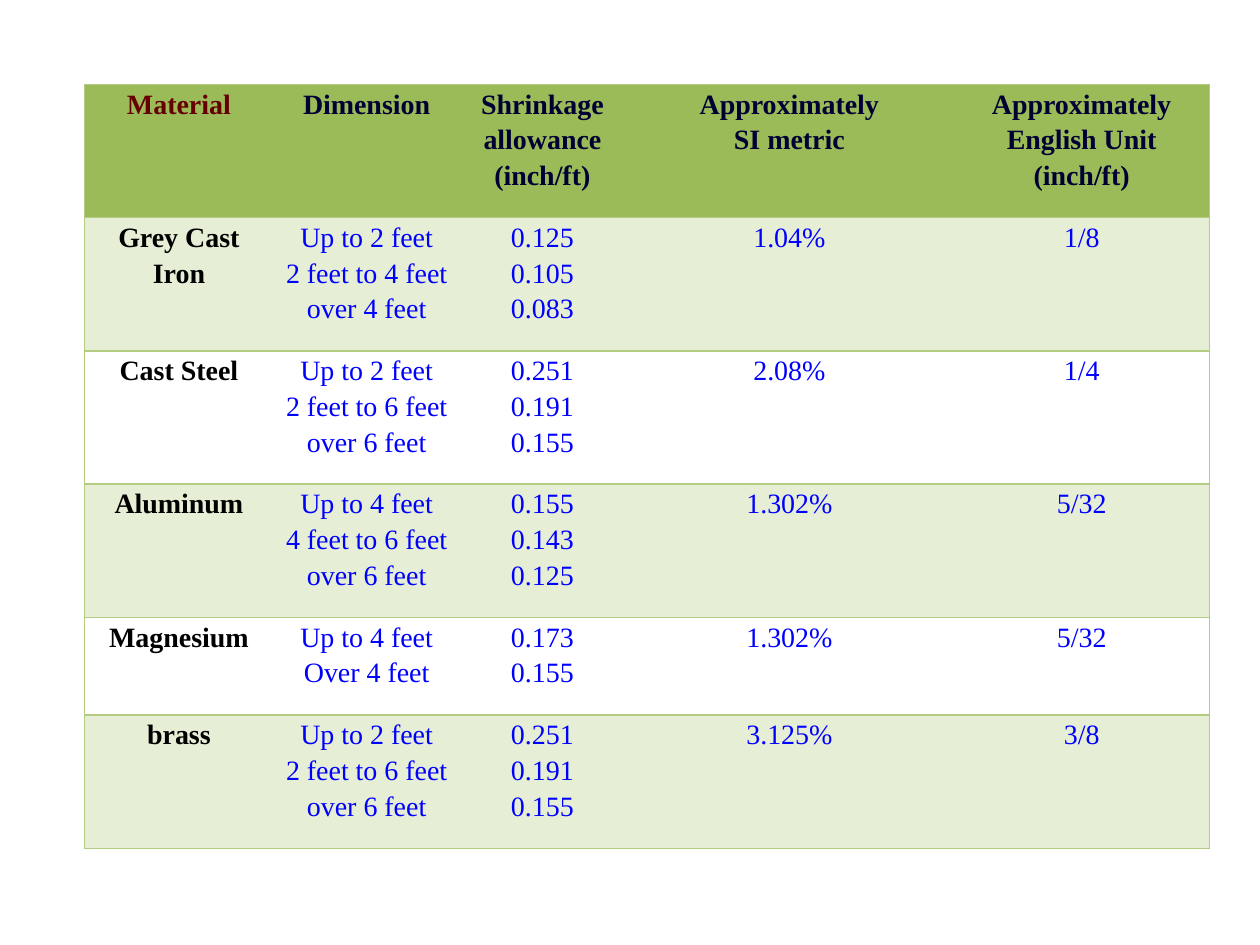
"""Build a slide with a table of shrinkage allowances for casting materials."""
from lxml.etree import SubElement
from pptx import Presentation
from pptx.dml.color import RGBColor
from pptx.enum.text import PP_ALIGN
from pptx.oxml.ns import qn
from pptx.util import Inches, Pt

HEADINGS = (
    "Material",
    "Dimension",
    "Shrinkage allowance (inch/ft)",
    "Approximately\nSI metric",
    "Approximately\nEnglish Unit\n(inch/ft)",
)
MATERIALS = (
    ("Grey Cast Iron", ("Up to 2 feet", "2 feet to 4 feet", "over 4 feet"),
     ("0.125", "0.105", "0.083"), "1.04%", "1/8"),
    ("Cast Steel", ("Up to 2 feet", "2 feet to 6 feet", "over 6 feet"),
     ("0.251", "0.191", "0.155"), "2.08%", "1/4"),
    ("Aluminum", ("Up to 4 feet", "4 feet to 6 feet", "over 6 feet"),
     ("0.155", "0.143", "0.125"), "1.302%", "5/32"),
    ("Magnesium", ("Up to 4 feet", "Over 4 feet"),
     ("0.173", "0.155"), "1.302%", "5/32"),
    ("brass", ("Up to 2 feet", "2 feet to 6 feet", "over 6 feet"),
     ("0.251", "0.191", "0.155"), "3.125%", "3/8"),
)
COLUMN_WIDTHS = (1.5, 1.48, 1.31, 2.61, 2.03)
HEADING_LINES = 3
LINE_HEIGHT = 0.2825
ROW_PADDING = 0.21
TABLE_START = 0.67

GREEN = RGBColor(0x9B, 0xBB, 0x59)
PALE_GREEN = RGBColor(0xE6, 0xEE, 0xD5)
BORDER_GREEN = RGBColor(0xB3, 0xCC, 0x82)
MAROON = RGBColor(0x66, 0x00, 0x00)
NAVY = RGBColor(0x00, 0x00, 0x33)
BLACK = RGBColor(0x00, 0x00, 0x00)
BLUE = RGBColor(0x00, 0x00, 0xFF)


def draw_borders(cell, visible_sides):
    properties = cell._tc.get_or_add_tcPr()
    for side in "LRTB":
        border = SubElement(properties, qn(f"a:ln{side}"), w=str(Pt(1)))
        if side in visible_sides:
            paint = SubElement(border, qn("a:solidFill"))
            SubElement(paint, qn("a:srgbClr"), val=str(BORDER_GREEN))
        else:
            SubElement(border, qn("a:noFill"))


def fill_cell(cell, text, background, color, bold):
    if background is None:
        cell.fill.background()
    else:
        cell.fill.solid()
        cell.fill.fore_color.rgb = background
    cell.margin_left = cell.margin_right = Inches(0.07)
    cell.margin_top = cell.margin_bottom = 0
    cell.text = text
    for paragraph in cell.text_frame.paragraphs:
        paragraph.alignment = PP_ALIGN.CENTER
        paragraph.line_spacing = 1.15
        paragraph.font.name = "Times New Roman"
        paragraph.font.size = Pt(16)
        paragraph.font.bold = bold
        paragraph.font.color.rgb = color


def main():
    presentation = Presentation()
    presentation.slide_width, presentation.slide_height = Inches(10), Inches(7.5)
    slide = presentation.slides.add_slide(presentation.slide_layouts[6])

    line_counts = [HEADING_LINES] + [len(material[1]) for material in MATERIALS]
    row_heights = [ROW_PADDING + LINE_HEIGHT * count for count in line_counts]
    allowances = slide.shapes.add_table(
        len(row_heights), len(COLUMN_WIDTHS), Inches(TABLE_START), Inches(TABLE_START),
        Inches(sum(COLUMN_WIDTHS)), Inches(sum(row_heights))).table
    allowances.first_row = allowances.horz_banding = False
    for column, width in zip(allowances.columns, COLUMN_WIDTHS):
        column.width = Inches(width)
    for row, height in zip(allowances.rows, row_heights):
        row.height = Inches(height)

    last_column = len(COLUMN_WIDTHS) - 1
    for row_index, entries in enumerate((HEADINGS,) + MATERIALS):
        is_heading = row_index == 0
        background = GREEN if is_heading else PALE_GREEN if row_index % 2 else None
        first_color, other_color = (MAROON, NAVY) if is_heading else (BLACK, BLUE)
        for column_index, entry in enumerate(entries):
            is_first = column_index == 0
            cell = allowances.cell(row_index, column_index)
            outer_side = "L" if is_first else "R" if column_index == last_column else ""
            draw_borders(cell, "TB" + outer_side)
            text = entry if isinstance(entry, str) else "\v".join(entry)
            fill_cell(cell, text, background, first_color if is_first else other_color,
                      is_heading or is_first)

    presentation.save("out.pptx")


if __name__ == "__main__":
    main()
